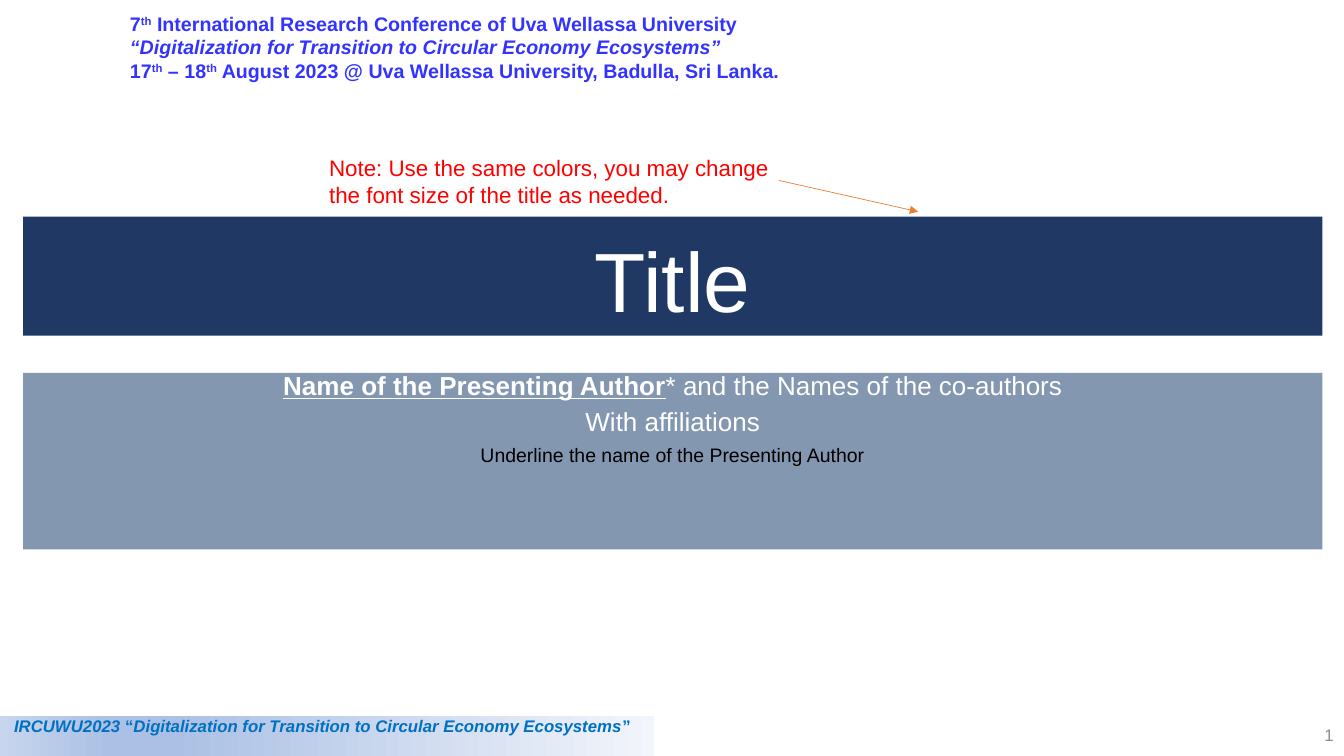
from lxml.etree import SubElement
from pptx import Presentation
from pptx.dml.color import RGBColor
from pptx.enum.shapes import MSO_CONNECTOR as CONNECTOR, MSO_SHAPE as SHAPE
from pptx.enum.text import MSO_ANCHOR as ANCHOR, MSO_AUTO_SIZE as AUTO_SIZE, PP_ALIGN as ALIGN
from pptx.oxml.ns import qn
from pptx.util import Pt

COLORS = {
    "navy": "203864", "slate": "8497B0", "white": "FFFFFF", "black": "000000",
    "violet": "3333FF", "red": "FF0000", "orange": "ED7D31", "gray": "8C8C8C",
    "blue": "0070C0",
}
FOOTER_STOPS = [(0, "F2F5FB"), (74, "ABC0E4"), (83, "ABC0E4"), (100, "C7D5ED")]
THEME = "Digitalization for Transition to Circular Economy Ecosystems"


def rgb(name):
    return RGBColor.from_string(COLORS[name])


def style(font, size, color, bold=False, italic=False, underline=False):
    font.name, font.size = "Arial", Pt(size)
    font.color.rgb = rgb(color)
    font.bold, font.italic, font.underline = bold, italic, underline


def add_span(para, text, size, color, raised=False, **marks):
    span = para.add_run()
    span.text = text
    style(span.font, size, color, **marks)
    if raised:
        span._r.get_or_add_rPr().set("baseline", "30000")


def place(shape, box):
    shape.left, shape.top, shape.width, shape.height = map(Pt, box)


def set_frame(shape, anchor):
    frame = shape.text_frame
    frame.word_wrap = True
    frame.auto_size = AUTO_SIZE.NONE
    frame.vertical_anchor = anchor
    frame.margin_left = frame.margin_right = Pt(7.2)
    frame.margin_top = frame.margin_bottom = Pt(3.6)
    return frame


def add_text_box(page, box, anchor=ANCHOR.TOP):
    return set_frame(page.shapes.add_textbox(*map(Pt, box)), anchor)


def fill_band(shape, box, color):
    place(shape, box)
    shape.fill.solid()
    shape.fill.fore_color.rgb = rgb(color)


def build_title(page, box):
    title = page.shapes.title
    fill_band(title, box, "navy")
    frame = set_frame(title, ANCHOR.BOTTOM)
    frame.text = "Title"
    para = frame.paragraphs[0]
    para.alignment, para.line_spacing = ALIGN.CENTER, 0.9
    style(para.runs[0].font, 60, "white")


def build_authors(page, box):
    authors = page.placeholders[1]
    fill_band(authors, box, "slate")
    frame = set_frame(authors, ANCHOR.TOP)
    lines = [
        [("Name of the Presenting Author", 18.6, "white", {"bold": True, "underline": True}),
         ("* and the Names of the co-authors", 18.6, "white", {})],
        [("With affiliations", 18.6, "white", {})],
        [("Underline the name of the Presenting Author", 13.9, "black", {})],
    ]
    for index, line in enumerate(lines):
        para = frame.add_paragraph() if index else frame.paragraphs[0]
        para.alignment, para.line_spacing = ALIGN.CENTER, 0.7
        para.space_before = Pt(10 if index else 0)
        for text, size, color, marks in line:
            add_span(para, text, size, color, **marks)


def build_conference(page, box):
    frame = add_text_box(page, box, ANCHOR.MIDDLE)
    raised = {"raised": True}
    lines = [
        [("7", {}), ("th", raised),
         (" International Research Conference of Uva Wellassa University", {})],
        [(f"“{THEME}”", {"italic": True})],
        [("17", {}), ("th", raised), (" – 18", {}), ("th", raised),
         (" August 2023 @ Uva Wellassa University, Badulla, Sri Lanka.", {})],
    ]
    for index, line in enumerate(lines):
        para = frame.add_paragraph() if index else frame.paragraphs[0]
        for text, marks in line:
            add_span(para, text, 14, "violet", bold=True, **marks)


def build_note(page, box):
    """Write the note and point its arrow at the title band."""
    left, top, width, height = box
    frame = add_text_box(page, box)
    add_span(frame.paragraphs[0], "Note: Use the same colors, you may change "
             "the font size of the title as needed.", 16, "red")
    start_x, start_y = left + width - 23, top + 22.3
    arrow = page.shapes.add_connector(
        CONNECTOR.STRAIGHT, Pt(start_x), Pt(start_y), Pt(start_x + 99.4), Pt(start_y + 22.3))
    arrow.line.color.rgb = rgb("orange")
    arrow.line.width = Pt(0.5)
    SubElement(arrow.line._get_or_add_ln(), qn("a:tailEnd"), type="triangle")
    SubElement(arrow._element.spPr, qn("a:effectLst"))


def build_footer(page, box):
    footer = page.shapes.add_shape(SHAPE.RECTANGLE, *map(Pt, box))
    footer.shadow.inherit = False
    footer.line.fill.background()
    footer.fill.gradient()
    footer.fill.gradient_angle = 180
    stops = footer._element.spPr.find(qn("a:gradFill")).find(qn("a:gsLst"))
    for stop in list(stops):
        stops.remove(stop)
    for percent, color in FOOTER_STOPS:
        stop = SubElement(stops, qn("a:gs"), pos=str(percent * 1000))
        SubElement(stop, qn("a:srgbClr"), val=color)
    frame = set_frame(footer, ANCHOR.TOP)
    frame.margin_left, frame.margin_top = Pt(10), Pt(0)
    para = frame.paragraphs[0]
    para.alignment = ALIGN.LEFT
    for text, italic in [("IRCUWU2023 ", True), ("“", False), (THEME, True), ("”", False)]:
        add_span(para, text, 12, "blue", bold=True, italic=italic)


def build_page_number(page, box):
    para = add_text_box(page, box, ANCHOR.MIDDLE).paragraphs[0]
    para.alignment = ALIGN.RIGHT
    add_span(para, "1", 12, "gray")


def main():
    deck = Presentation()
    deck.slide_width, deck.slide_height = Pt(960), Pt(540)
    page = deck.slides.add_slide(deck.slide_layouts[0])
    build_footer(page, (0, 511.2, 467.3, 28.8))
    build_title(page, (16.5, 154.8, 928.1, 85))
    build_authors(page, (16.5, 266.4, 928.1, 126))
    build_conference(page, (85.7, 4.3, 538.6, 58.3))
    build_note(page, (228, 106.6, 351.4, 46))
    build_page_number(page, (743.8, 510.5, 216, 28.8))
    deck.save("out.pptx")


if __name__ == "__main__":
    main()
